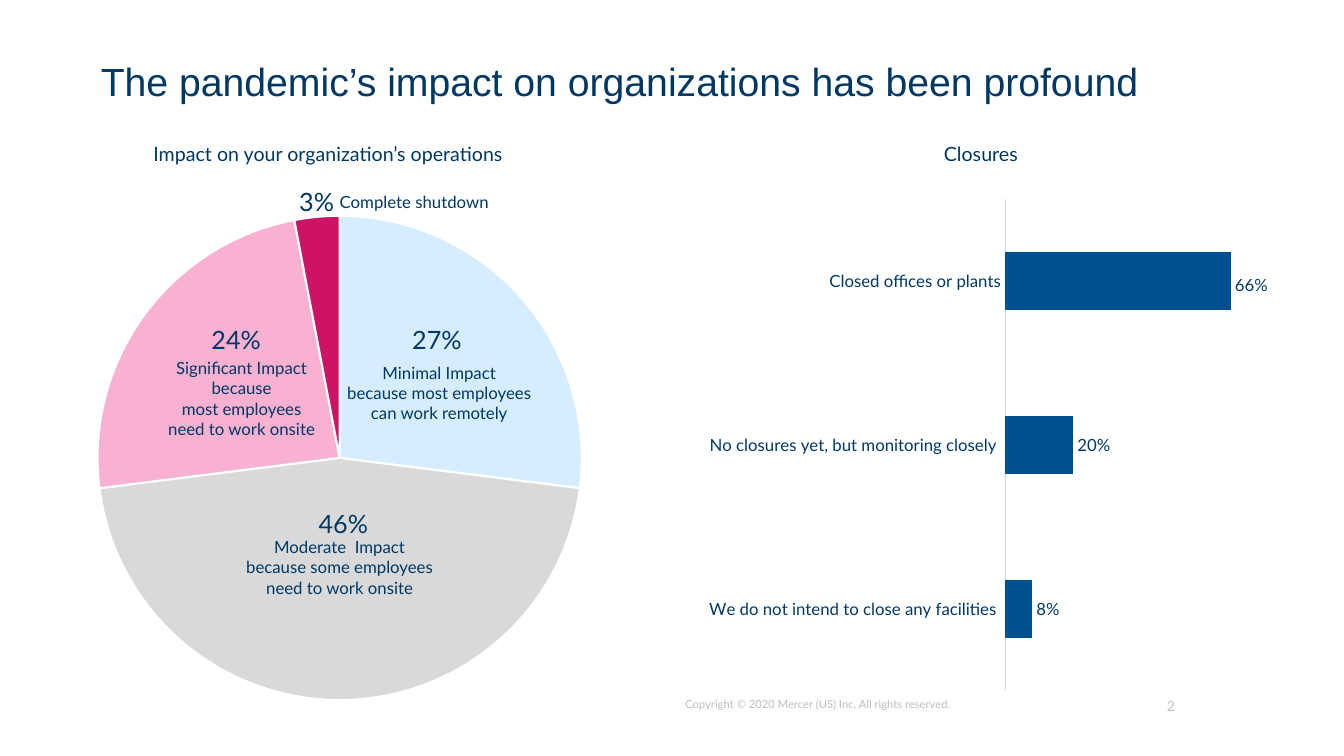
from dataclasses import dataclass

from lxml.etree import SubElement
from pptx import Presentation
from pptx.chart.data import CategoryChartData
from pptx.dml.color import RGBColor
from pptx.enum.chart import (
    XL_CHART_TYPE as ChartType,
    XL_LABEL_POSITION as LabelPosition,
    XL_TICK_LABEL_POSITION as TickLabels,
    XL_TICK_MARK as TickMark,
)
from pptx.enum.text import MSO_ANCHOR as Anchor, PP_ALIGN as Align
from pptx.oxml.ns import qn
from pptx.util import Cm, Pt


@dataclass(frozen=True)
class Theme:
    navy: str = "003865"
    bar: str = "004F8E"
    axis: str = "D9D9D9"
    muted: str = "B9BFC7"
    white: str = "FFFFFF"
    slices: tuple = ("D6EDFF", "D9D9D9", "F8B1D1", "CE1265")
    title_font: str = "Arial"
    body_font: str = "Lato"
    title: int = 28
    percent: int = 18
    heading: int = 14
    label: int = 12
    small: int = 10
    tiny: int = 8


THEME = Theme()
HEADING_SIZE = (10, 1)
PERCENT_SIZE = (2.54, 1)
CAPTION_SIZE = (5.08, 2.54)


def color(value):
    return RGBColor.from_string(value)


def style_font(font, size, ink=THEME.navy, face=THEME.body_font):
    font.size = Pt(size)
    font.name = face
    font.color.rgb = color(ink)


def add_text(slide, text, box, size, ink=THEME.navy, face=THEME.body_font,
             align=Align.LEFT, line_spacing=None):
    frame = slide.shapes.add_textbox(*map(Cm, box)).text_frame
    frame.margin_left = frame.margin_right = frame.margin_top = frame.margin_bottom = 0
    frame.word_wrap = True
    frame.vertical_anchor = Anchor.TOP
    paragraph = frame.paragraphs[0]
    paragraph.text = text
    paragraph.alignment = align
    paragraph.line_spacing = line_spacing
    for run in paragraph.runs:
        style_font(run.font, size, ink, face)


def add_region_chart(slide, kind, box, categories, values, number_format, plot_area):
    data = CategoryChartData(number_format=number_format)
    data.categories = categories
    data.add_series("Series 1", values)
    chart = slide.shapes.add_chart(kind, *map(Cm, box), data).chart
    chart.has_legend = False
    chart.has_title = False
    style_font(chart.font, THEME.small)
    plot_xml = chart.plots[0]._element.getparent()
    layout = plot_xml.find(qn("c:layout"))
    if layout is None:
        layout = plot_xml.makeelement(qn("c:layout"))
        plot_xml.insert(0, layout)
    manual = SubElement(layout, qn("c:manualLayout"))
    settings = [("layoutTarget", "inner"), ("xMode", "edge"), ("yMode", "edge")]
    for tag, value in settings + list(zip("xywh", plot_area)):
        SubElement(manual, qn(f"c:{tag}")).set("val", str(value))
    return chart


def add_title(slide, left, top):
    add_text(slide, "The pandemic’s impact on organizations has been profound",
             (left, top, 28.09, 2.64), THEME.title, face=THEME.title_font,
             line_spacing=0.9)


def add_operations(slide, left, top):
    add_text(slide, "Impact on your organization’s operations",
             (left + 1.21, top, *HEADING_SIZE), THEME.heading, align=Align.CENTER)
    chart = add_region_chart(slide, ChartType.PIE, (left, top + 1.18, 13, 13.56),
                             ["1", "2", "3", "4"], [27, 46, 24, 3], "General",
                             (0.03, 0.05, 0.94, 0.9))
    pie = chart.plots[0]
    pie.vary_by_categories = True
    for index, fill in enumerate(THEME.slices):
        point = pie.series[0].points[index].format
        point.fill.solid()
        point.fill.fore_color.rgb = color(fill)
        point.line.color.rgb = color(THEME.white)
        point.line.width = Pt(1.5)

    impacts = [
        ("27%", (8.33, 4.59), "Minimal Impact\nbecause most employees\ncan work remotely", (6.47, 5.56)),
        ("46%", (5.97, 9.22), "Moderate  Impact\nbecause some employees\nneed to work onsite", (3.96, 9.95)),
        ("24%", (3.27, 4.59), "Significant Impact\nbecause\nmost employees\nneed to work onsite", (1.49, 5.44)),
        ("3%", (5.48, 1.12), "Complete shutdown", (5.84, 1.25)),
    ]
    for percent, (percent_x, percent_y), caption, (caption_x, caption_y) in impacts:
        add_text(slide, percent, (left + percent_x, top + percent_y, *PERCENT_SIZE),
                 THEME.percent)
        add_text(slide, caption, (left + caption_x, top + caption_y, *CAPTION_SIZE),
                 THEME.label, align=Align.CENTER)


def add_closures(slide, left, top):
    add_text(slide, "Closures", (left + 2.12, top, *HEADING_SIZE), THEME.heading,
             align=Align.CENTER)
    chart = add_region_chart(
        slide, ChartType.BAR_CLUSTERED, (left + 0.02, top + 1.18, 14.02, 12.9),
        ["We do not intend to close any facilities ",
         "No closures yet, but monitoring closely ",
         "Closed offices or plants"],
        [0.08, 0.2, 0.66], "0%", (0.55, 0.02, 0.43, 0.96))
    answers = chart.category_axis
    answers.major_tick_mark = answers.minor_tick_mark = TickMark.NONE
    answers.has_major_gridlines = False
    answers.format.line.color.rgb = color(THEME.axis)
    answers.format.line.width = Pt(0.75)
    style_font(answers.tick_labels.font, THEME.label)
    shares = chart.value_axis
    shares.minimum_scale, shares.maximum_scale = 0, 0.7
    shares.has_major_gridlines = False
    shares.tick_label_position = TickLabels.NONE
    shares.visible = False

    bars = chart.plots[0]
    bars.gap_width = 182
    bars.vary_by_categories = False
    series = bars.series[0]
    series.format.fill.solid()
    series.format.fill.fore_color.rgb = color(THEME.bar)
    labels = series.data_labels
    labels.show_value = True
    labels.number_format = "0%"
    labels.number_format_is_linked = False
    labels.position = LabelPosition.OUTSIDE_END
    style_font(labels.font, THEME.label)
    closed_label = labels._element.makeelement(qn("c:dLbl"))
    SubElement(closed_label, qn("c:idx")).set("val", "2")
    SubElement(closed_label, qn("c:delete")).set("val", "1")
    labels._element.insert(0, closed_label)
    add_text(slide, "66%", (left + 13.52, top + 3.35, 2.54, 0.76), THEME.label)


def add_footer(slide, left, top):
    add_text(slide, "Copyright © 2020 Mercer (US) Inc. All rights reserved.",
             (left, top, 11.63, 0.76), THEME.tiny, THEME.muted)
    add_text(slide, "2", (left + 12.14, top, 1.9, 0.76), THEME.small, THEME.muted)


def main():
    deck = Presentation()
    deck.slide_width, deck.slide_height = Cm(33.87), Cm(19.05)
    slide = deck.slides.add_slide(deck.slide_layouts[6])
    add_title(slide, 2.54, 1.57)
    add_operations(slide, 2.06, 3.58)
    add_closures(slide, 17.6, 3.58)
    add_footer(slide, 17.27, 17.58)
    deck.save("out.pptx")


if __name__ == "__main__":
    main()
